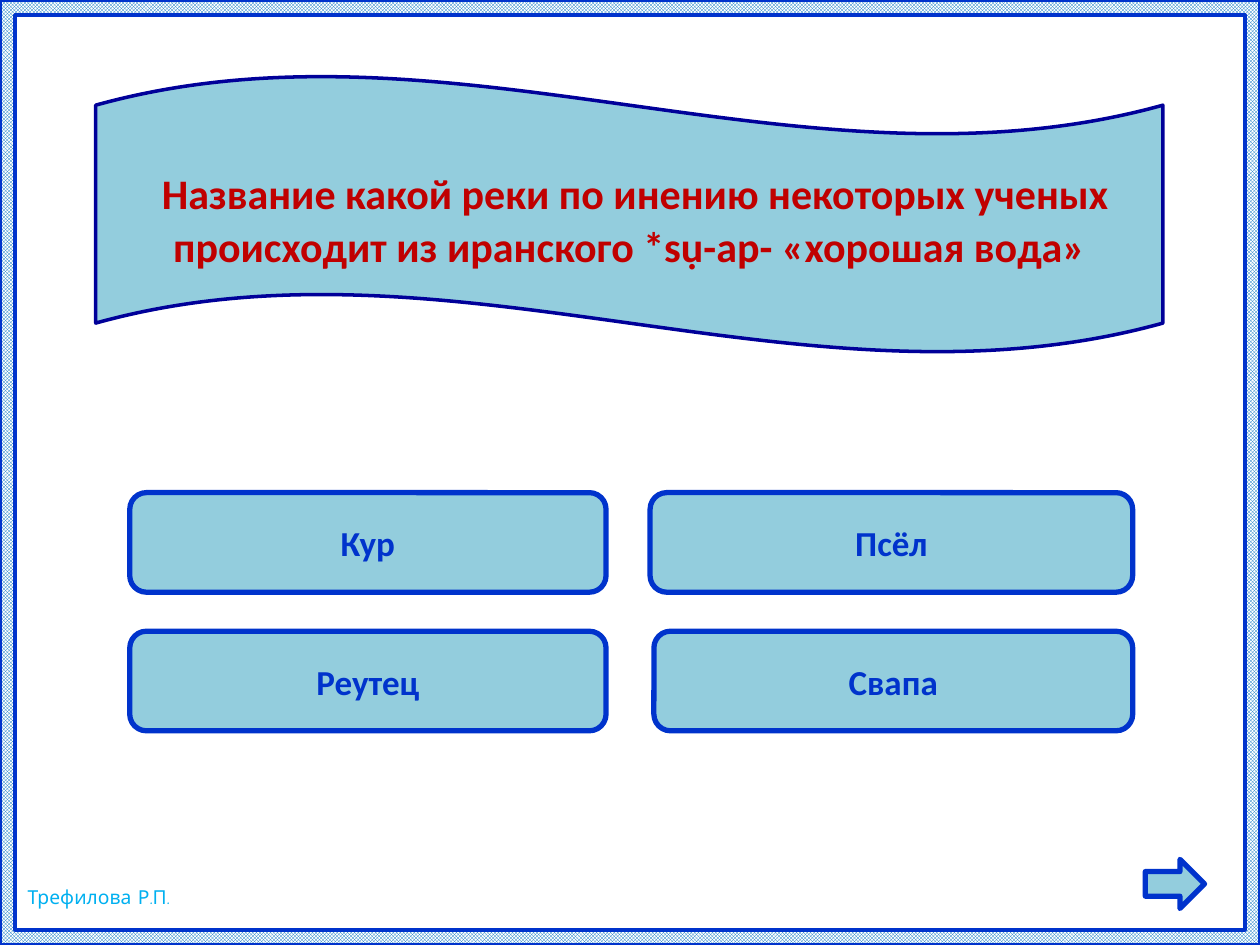
from pptx import Presentation
from pptx import util as u
from pptx.dml.color import RGBColor
from pptx.enum import dml, shapes, text

COLORS = {"white": "FFFFFF", "check": "0070C0", "blue": "0033CC", "navy": "000099",
          "aqua": "93CDDD", "red": "C00000", "sky": "00B0F0"}
QUESTION = ("Название какой реки по инению некоторых ученых "
            "происходит из иранского *sụ-ap- «хорошая вода»")
AUTHOR = "Трефилова Р.П."
ANSWER_ROWS = [
    (3.91, [("Кур", 1.03, 4.81), ("Псёл", 5.16, 8.99)]),
    (5.01, [("Реутец", 1.03, 4.81), ("Свапа", 5.19, 8.99)]),
]
ANSWER_HEIGHT = 0.79
SHAPE = shapes.MSO_SHAPE


def rgb(name):
    return RGBColor.from_string(COLORS[name])


def add_shape(s, kind, box, line, width, adjustments=()):
    sp = s.shapes.add_shape(kind, *map(u.Inches, box))
    sp.shadow.inherit = False
    sp.fill.solid()
    sp.fill.fore_color.rgb = rgb("aqua")
    sp.line.color.rgb = rgb(line)
    sp.line.width = u.Pt(width)
    for i, value in enumerate(adjustments):
        sp.adjustments[i] = value
    return sp


def add_run(p, words, size, color, font="Calibri", bold=True):
    r = p.add_run()
    r.text = words
    r.font.size = u.Pt(size)
    r.font.name = font
    r.font.bold = bold
    r.font.color.rgb = rgb(color)


def centered_paragraph(sp):
    tf = sp.text_frame
    tf.word_wrap = True
    tf.vertical_anchor = text.MSO_ANCHOR.MIDDLE
    p = tf.paragraphs[0]
    p.alignment = text.PP_ALIGN.CENTER
    return p


def add_frame(s):
    sp = add_shape(s, SHAPE.FRAME, (0, 0, 10, 7.5), "blue", 2, [0.016])
    sp.fill.patterned()
    sp.fill.pattern = dml.MSO_PATTERN.SMALL_CHECKER_BOARD
    sp.fill.fore_color.rgb = rgb("check")
    sp.fill.back_color.rgb = rgb("white")


def add_author(s):
    sp = s.shapes.add_textbox(*map(u.Inches, (0.12, 6.98, 1.42, 0.29)))
    tf = sp.text_frame
    tf.word_wrap = False
    tf.auto_size = text.MSO_AUTO_SIZE.SHAPE_TO_FIT_TEXT
    add_run(tf.paragraphs[0], AUTHOR, 11, "sky", "Comic Neue", False)


def main():
    """Build a quiz slide with a question banner and four answer buttons."""
    prs = Presentation()
    prs.slide_width, prs.slide_height = u.Inches(10), u.Inches(7.5)
    s = prs.slides.add_slide(prs.slide_layouts[6])
    add_frame(s)
    add_author(s)

    banner = add_shape(s, SHAPE.WAVE, (0.76, 0.6, 8.47, 2.2), "navy", 2, [0.107, 0])
    p = centered_paragraph(banner)
    add_run(p, " ", 30, "red")
    add_run(p, QUESTION, 24, "red")

    for top, answers in ANSWER_ROWS:
        for answer, left, right in answers:
            box = (left, top, right - left, ANSWER_HEIGHT)
            button = add_shape(s, SHAPE.ROUNDED_RECTANGLE, box, "blue", 3)
            add_run(centered_paragraph(button), answer, 20, "blue")

    add_shape(s, SHAPE.RIGHT_ARROW, (9.09, 6.82, 0.47, 0.39), "blue", 3)
    prs.save("out.pptx")


if __name__ == "__main__":
    main()
